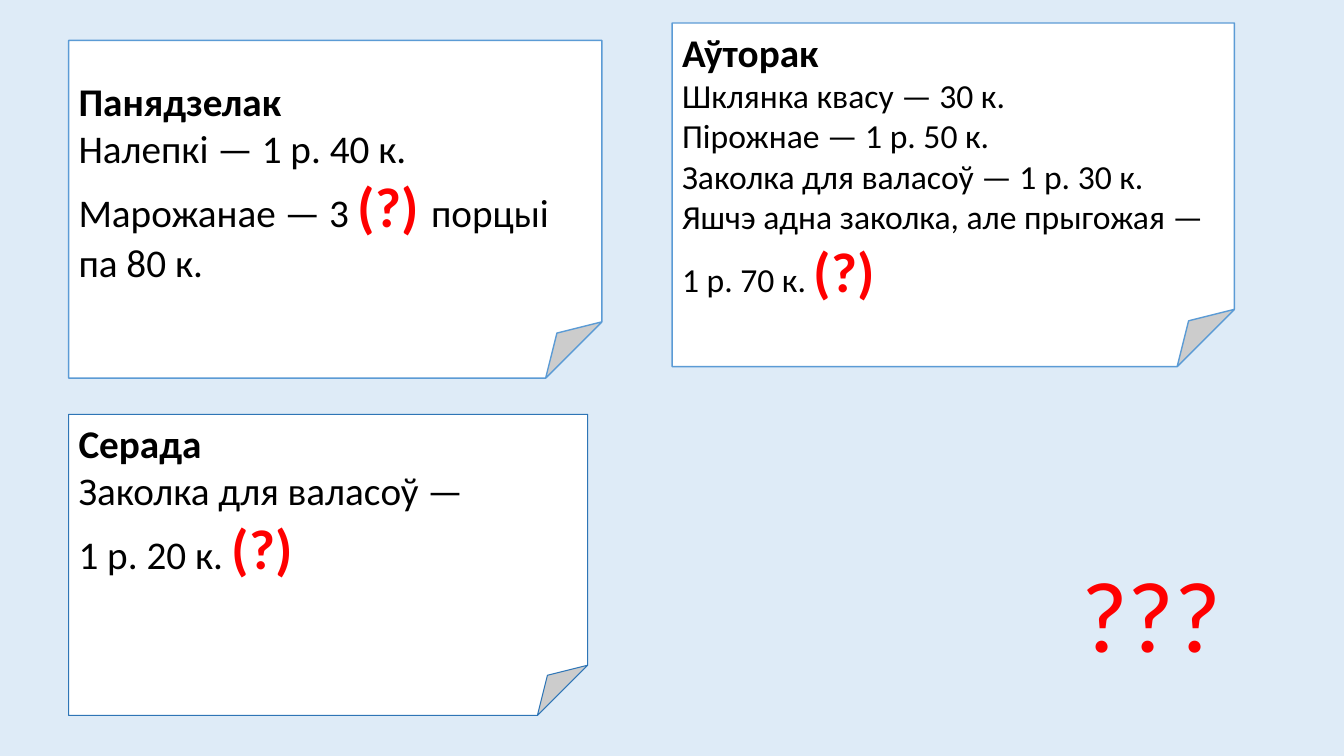
import pptx
import pptx.dml.color
import pptx.enum.shapes
import pptx.enum.text
import pptx.util

Cm = pptx.util.Cm
Pt = pptx.util.Pt
RGBColor = pptx.dml.color.RGBColor
ANCHOR = pptx.enum.text.MSO_ANCHOR

PALE_BLUE = RGBColor(0xDE, 0xEB, 0xF7)
WHITE = RGBColor(0xFF, 0xFF, 0xFF)
BLACK = RGBColor(0x00, 0x00, 0x00)
RED = RGBColor(0xFF, 0x00, 0x00)
BLUE = RGBColor(0x5B, 0x9B, 0xD5)
DARK_BLUE = RGBColor(0x2E, 0x75, 0xB6)

# Text formats: font attributes and colour
FONT = "Calibri"
DAY = ({"name": FONT, "size": Pt(28), "bold": True}, BLACK)
LARGE = ({"name": FONT, "size": Pt(28), "bold": False}, BLACK)
SMALL = ({"name": FONT, "size": Pt(24), "bold": False}, BLACK)
QUERY = ({"name": FONT, "size": Pt(40), "bold": True}, RED)
BIG_QUERY = ({"name": FONT, "size": Pt(72), "bold": False}, RED)

# Each note: box (left, top, width, height in cm), line, anchor, paragraphs
NOTES = [
    ((1.73, 1.02, 13.44, 8.51), (BLUE, 1), ANCHOR.MIDDLE, [
        [("Панядзелак", DAY)],
        [("Налепкі — 1 р. 40 к.", LARGE)],
        [("Марожанае — 3 ", LARGE), ("(?) ", QUERY),
         ("порцыі \nпа 80 к.", LARGE)],
    ]),
    ((16.94, 0.58, 14.17, 8.66), (BLUE, 1), ANCHOR.TOP, [
        [("Аўторак", DAY)],
        [("Шклянка квасу — 30 к.", SMALL)],
        [("Пірожнае — 1 р. 50 к.", SMALL)],
        [("Заколка для валасоў — 1 р. 30 к.", SMALL)],
        [("Яшчэ адна заколка, але прыгожая —\n1 р. 70 к. ", SMALL),
         ("(?)", QUERY)],
    ]),
    ((1.73, 10.44, 13.08, 7.59), (DARK_BLUE, 0.75), ANCHOR.TOP, [
        [("Серада", DAY)],
        [("Заколка для валасоў — \n1 р. 20 к. ", LARGE), ("(?)", QUERY)],
    ]),
]
QUESTION_BOX = (27, 13.79, 8.18, 3.33)


def write_paragraphs(frame, paragraphs, anchor):
    """Fill a text frame with left-aligned paragraphs of formatted spans."""
    frame.word_wrap = True
    frame.vertical_anchor = anchor
    for number, spans in enumerate(paragraphs):
        para = frame.add_paragraph() if number else frame.paragraphs[0]
        para.alignment = pptx.enum.text.PP_ALIGN.LEFT
        for text, (font_values, colour) in spans:
            for row, line in enumerate(text.split("\n")):
                if row:
                    para.add_line_break()
                span = para.add_run()
                span.text = line
                for attribute, value in font_values.items():
                    setattr(span.font, attribute, value)
                span.font.color.rgb = colour


def add_note(page, box, outline, anchor, paragraphs):
    """A sheet with a folded corner listing one day's spending."""
    note = page.shapes.add_shape(
        pptx.enum.shapes.MSO_SHAPE.FOLDED_CORNER, *map(Cm, box))
    note.shadow.inherit = False
    note.fill.solid()
    note.fill.fore_color.rgb = WHITE
    colour, width = outline
    note.line.color.rgb = colour
    note.line.width = Pt(width)
    write_paragraphs(note.text_frame, paragraphs, anchor)


def add_question(page, box):
    """The large question marks in the free corner."""
    question = page.shapes.add_textbox(*map(Cm, box))
    write_paragraphs(question.text_frame, [[("???", BIG_QUERY)]], ANCHOR.TOP)


def main():
    deck = pptx.Presentation()
    deck.slide_width, deck.slide_height = Cm(33.87), Cm(19.05)
    page = deck.slides.add_slide(deck.slide_layouts[6])

    # Background
    page.background.fill.solid()
    page.background.fill.fore_color.rgb = PALE_BLUE

    # Day notes and question marks
    for note in NOTES:
        add_note(page, *note)
    add_question(page, QUESTION_BOX)

    deck.save("out.pptx")


if __name__ == "__main__":
    main()
